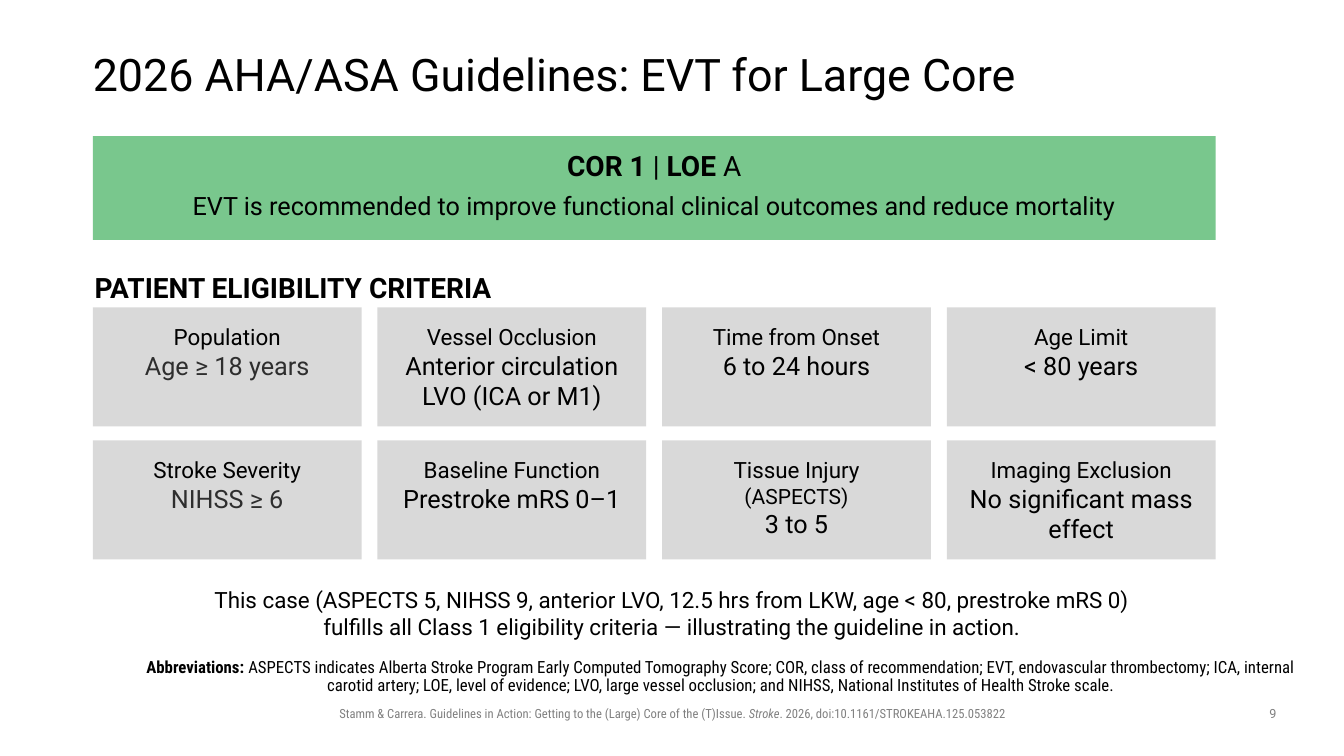
from dataclasses import dataclass

import pptx
import pptx.dml.color
import pptx.enum.shapes
import pptx.enum.text
import pptx.presentation
import pptx.slide
import pptx.util

Pt = pptx.util.Pt
Align = pptx.enum.text.PP_ALIGN
Anchor = pptx.enum.text.MSO_ANCHOR


@dataclass(frozen=True)
class Theme:
    black: str = "000000"
    soft_black: str = "2E2E2E"
    muted: str = "808080"
    green: str = "79C78D"
    gray: str = "D9D9D9"
    font: str = "Roboto"
    condensed: str = "Roboto Condensed"
    title: float = 32
    heading: float = 20
    value: float = 18
    label: float = 16
    qualifier: float = 15
    note: float = 12
    footer: float = 9


THEME = Theme()


@dataclass(frozen=True)
class Frame:
    left: float
    top: float
    width: float
    height: float


@dataclass(frozen=True)
class Span:
    text: str
    size: float
    bold: bool = False
    italic: bool = False
    color: str = THEME.black
    font: str = THEME.font


@dataclass(frozen=True)
class Para:
    spans: list[Span]
    align: Align = Align.CENTER
    line_spacing: float = 1.0
    space_before: float = 0


@dataclass(frozen=True)
class Card:
    label: str
    value: str
    qualifier: str = ""
    value_color: str = THEME.black
    lines: int = 2


CARDS = [
    Card("Population", "Age ≥ 18 years", value_color=THEME.soft_black),
    Card("Vessel Occlusion", "Anterior circulation LVO (ICA or M1)", lines=3),
    Card("Time from Onset", "6 to 24 hours"),
    Card("Age Limit", "< 80 years"),
    Card("Stroke Severity", "NIHSS ≥ 6", value_color=THEME.soft_black),
    Card("Baseline Function", "Prestroke mRS 0–1"),
    Card("Tissue Injury ", "3 to 5", qualifier="(ASPECTS)", lines=3),
    Card("Imaging Exclusion", "No significant mass effect", lines=3),
]
COLUMNS = 4
LEFT = 66.3
CONTENT_WIDTH = 802
CARD_TOP, CARD_WIDTH, CARD_HEIGHT = 219.6, 192, 85
COLUMN_STEP = (CONTENT_WIDTH - CARD_WIDTH) / (COLUMNS - 1)
ROW_STEP = 95
CARD_TEXT_WIDTH, CARD_TEXT_OFFSET, LINE_HEIGHT = 180, 7.9, 24


def add_panel(slide: pptx.slide.Slide, frame: Frame, color: str) -> None:
    panel = slide.shapes.add_shape(
        pptx.enum.shapes.MSO_SHAPE.RECTANGLE,
        Pt(frame.left), Pt(frame.top), Pt(frame.width), Pt(frame.height),
    )
    panel.shadow.inherit = False
    panel.fill.solid()
    panel.fill.fore_color.rgb = pptx.dml.color.RGBColor.from_string(color)
    panel.line.fill.background()


def add_text(
    slide: pptx.slide.Slide,
    frame: Frame,
    paras: list[Para],
    anchor: Anchor = Anchor.TOP,
    insets: tuple[float, float, float, float] = (7.2, 3.6, 7.2, 3.6),
) -> None:
    """Add a wrapping text box; insets run left, top, right, bottom."""
    box = slide.shapes.add_textbox(
        Pt(frame.left), Pt(frame.top), Pt(frame.width), Pt(frame.height)
    )
    text_frame = box.text_frame
    text_frame.word_wrap = True
    text_frame.vertical_anchor = anchor
    text_frame.margin_left, text_frame.margin_top = Pt(insets[0]), Pt(insets[1])
    text_frame.margin_right, text_frame.margin_bottom = Pt(insets[2]), Pt(insets[3])
    for index, para in enumerate(paras):
        paragraph = text_frame.add_paragraph() if index else text_frame.paragraphs[0]
        paragraph.alignment = para.align
        paragraph.line_spacing = para.line_spacing
        paragraph.space_before = Pt(para.space_before)
        for span in para.spans:
            run = paragraph.add_run()
            run.text = span.text
            run.font.name = span.font
            run.font.size = Pt(span.size)
            run.font.bold = span.bold
            run.font.italic = span.italic
            run.font.color.rgb = pptx.dml.color.RGBColor.from_string(span.color)


def add_card(slide: pptx.slide.Slide, index: int, card: Card) -> None:
    row, column = divmod(index, COLUMNS)
    left = LEFT + column * COLUMN_STEP
    top = CARD_TOP + row * ROW_STEP
    add_panel(slide, Frame(left, top, CARD_WIDTH, CARD_HEIGHT), THEME.gray)
    label = [Span(card.label, THEME.label)]
    if card.qualifier:
        label.append(Span(card.qualifier, THEME.qualifier))
    text_left = left + (CARD_WIDTH - CARD_TEXT_WIDTH) / 2
    add_text(
        slide,
        Frame(text_left, top + CARD_TEXT_OFFSET, CARD_TEXT_WIDTH, card.lines * LINE_HEIGHT),
        [Para(label), Para([Span(card.value, THEME.value, color=card.value_color)])],
    )


def add_banner(slide: pptx.slide.Slide) -> None:
    add_panel(slide, Frame(LEFT, 97.2, CONTENT_WIDTH, 74.2), THEME.green)
    rating = [
        Span("COR 1 ", THEME.heading, bold=True),
        Span("|", THEME.heading),
        Span(" LOE ", THEME.heading, bold=True),
        Span("A", THEME.heading),
    ]
    advice = Span(
        "EVT is recommended to improve functional clinical outcomes and reduce mortality",
        THEME.value,
    )
    add_text(slide, Frame(67, 107.3, 800.6, 54.7), [
        Para(rating, line_spacing=0.8),
        Para([advice], line_spacing=0.8, space_before=10),
    ])


def add_notes_and_footer(slide: pptx.slide.Slide) -> None:
    add_text(slide, Frame(123.1, 415.4, 713.5, 54.7), [Para([Span(
        "This case (ASPECTS 5, NIHSS 9, anterior LVO, 12.5 hrs from LKW, age < 80, "
        "prestroke mRS 0) fulfills all Class 1 eligibility criteria — illustrating "
        "the guideline in action.", THEME.label)])])
    add_text(slide, Frame(102.2, 464.4, 833, 36), [Para([
        Span("Abbreviations:", THEME.note, bold=True, font=THEME.condensed),
        Span(
            " ASPECTS indicates Alberta Stroke Program Early Computed Tomography Score; "
            "COR, class of recommendation; EVT, endovascular thrombectomy; ICA, internal "
            "carotid artery; LOE, level of evidence; LVO, large vessel occlusion; and "
            "NIHSS, National Institutes of Health Stroke scale.",
            THEME.note, font=THEME.condensed),
    ], line_spacing=0.9)], Anchor.BOTTOM, (0, 3.6, 7.2, 3.6))
    citation = [
        ("Stamm & Carrera. Guidelines in Action: Getting to the (Large) Core "
         "of the (T)Issue. ", False),
        ("Stroke", True),
        (". 2026, doi:10.1161/STROKEAHA.125.053822", False),
    ]
    add_text(slide, Frame(169.9, 500.4, 620.6, 18), [Para([
        Span(text, THEME.footer, italic=italic, color=THEME.muted, font=THEME.condensed)
        for text, italic in citation
    ])])
    add_text(slide, Frame(894.2, 500.4, 30.2, 18.7),
             [Para([Span("9", THEME.footer, color=THEME.muted)])])


def main() -> None:
    deck = pptx.Presentation()
    deck.slide_width, deck.slide_height = Pt(960), Pt(540)
    slide = deck.slides.add_slide(deck.slide_layouts[6])
    title = Span("2026 AHA/ASA Guidelines: EVT for Large Core", THEME.title)
    add_text(slide, Frame(LEFT, 28.8, 828, 51.8),
             [Para([title], Align.LEFT, 0.9)], Anchor.MIDDLE, (0, 0, 0, 0))
    add_banner(slide)
    heading = Span("PATIENT ELIGIBILITY CRITERIA", THEME.heading, bold=True)
    add_text(slide, Frame(60.5, 189.4, 419.8, 31.7), [Para([heading], Align.LEFT)])
    for index, card in enumerate(CARDS):
        add_card(slide, index, card)
    add_notes_and_footer(slide)
    deck.save("out.pptx")


if __name__ == "__main__":
    main()
